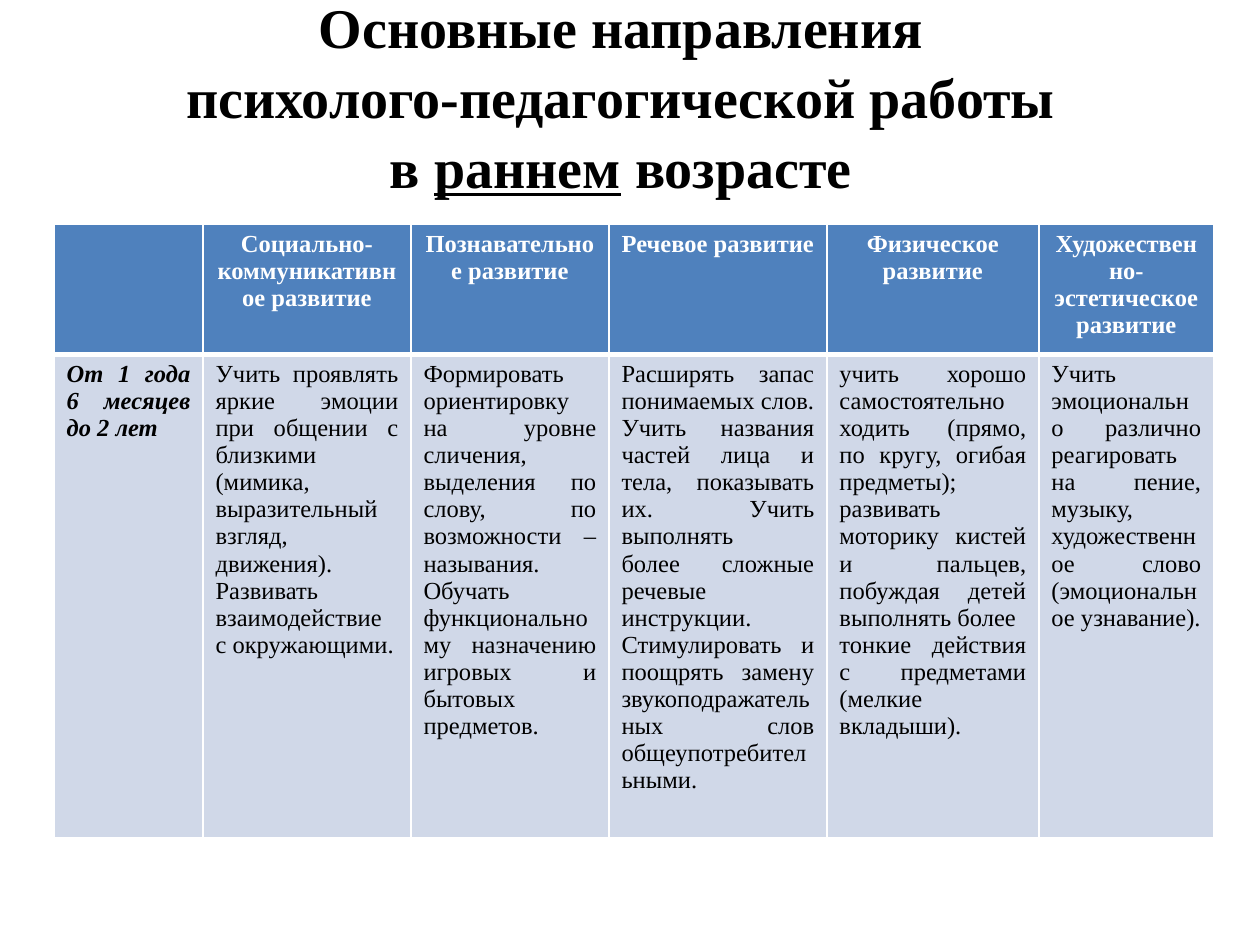
import pptx
import pptx.dml.color
import pptx.enum.text
import pptx.oxml.ns
import pptx.util
from lxml import etree

EMU_PER_PX = 914400 // 126
FONT = "Times New Roman"
ALIGN = pptx.enum.text.PP_ALIGN
HEADERS = [
    "",
    "Социально-коммуникативное развитие",
    "Познавательное развитие",
    "Речевое развитие",
    "Физическое развитие",
    "Художественно-эстетическое развитие",
]
GOALS = [
    "От 1 года 6 месяцев до 2 лет",
    "Учить проявлять яркие эмоции при общении с близкими\n"
    "(мимика, выразительный взгляд, движения). Развивать взаимодействие с окружающими.",
    "Формировать ориентировку на уровне сличения, выделения по слову, по возможности – называния. "
    "Обучать функциональному назначению игровых и бытовых предметов.",
    "Расширять запас понимаемых слов. Учить названия частей лица и тела, показывать их. Учить выполнять\n"
    "более сложные речевые инструкции. Стимулировать и поощрять замену звукоподражательных слов "
    "общеупотребительными.",
    "учить хорошо самостоятельно ходить (прямо, по кругу, огибая предметы); развивать моторику кистей "
    "и пальцев, побуждая детей выполнять более\n"
    "тонкие действия с предметами (мелкие вкладыши).",
    "Учить эмоционально различно реагировать на пение, музыку, художественное слово "
    "(эмоциональное узнавание).",
]
COLUMN_WIDTHS = [149, 208, 198, 218, 212, 175]
ROW_HEIGHT = 52


def px(length):
    return pptx.util.Emu(length * EMU_PER_PX)


def color(value):
    return pptx.dml.color.RGBColor.from_string(value)


class SlideBuilder:
    """Holds the style and the current slide and adds its elements."""

    def __init__(self, slide):
        self.slide = slide
        self.header_fill = "4F81BD"
        self.body_fill = "D0D8E8"
        self.light = "FFFFFF"
        self.dark = "000000"

    def format_runs(self, paragraph, size, text_color, bold=False, italic=False):
        for run in paragraph.runs:
            run.font.name = FONT
            run.font.size = pptx.util.Pt(size)
            run.font.bold = bold
            run.font.italic = italic
            run.font.color.rgb = color(text_color)

    def title(self, left, top, width, height, before, underlined, after):
        shape = self.slide.shapes.add_textbox(px(left), px(top), px(width), px(height))
        text_frame = shape.text_frame
        text_frame.word_wrap = True
        text_frame.vertical_anchor = pptx.enum.text.MSO_ANCHOR.MIDDLE
        paragraph = text_frame.paragraphs[0]
        paragraph.text = before
        paragraph.alignment = ALIGN.CENTER
        paragraph.line_spacing = 1.04
        for text, underline in ((underlined, True), (after, False)):
            run = paragraph.add_run()
            run.text = text
            run.font.underline = underline
        self.format_runs(paragraph, 32, self.dark, bold=True)

    def borders(self, cell, top, bottom):
        properties = cell._tc.get_or_add_tcPr()
        for side, points in (("L", 1), ("R", 1), ("T", top), ("B", bottom)):
            line = etree.SubElement(properties, pptx.oxml.ns.qn(f"a:ln{side}"), w=str(pptx.util.Pt(points)))
            fill = etree.SubElement(line, pptx.oxml.ns.qn("a:solidFill"))
            etree.SubElement(fill, pptx.oxml.ns.qn("a:srgbClr"), val=self.light)

    def cell(self, cell, text, header, label):
        self.borders(cell, top=1 if header else 3, bottom=3 if header else 1)
        cell.fill.solid()
        cell.fill.fore_color.rgb = color(self.header_fill if header else self.body_fill)
        cell.text_frame.text = text
        for paragraph in cell.text_frame.paragraphs:
            paragraph.alignment = ALIGN.CENTER if header else ALIGN.JUSTIFY
            self.format_runs(paragraph, 14, self.light if header else self.dark,
                             bold=header or label, italic=label and not header)

    def table(self, left, top, widths, row_height, rows):
        frame = self.slide.shapes.add_table(
            len(rows), len(widths), px(left), px(top), px(sum(widths)), px(row_height * len(rows)))
        table = frame.table
        for column, width in zip(table.columns, widths):
            column.width = px(width)
        for row_index, texts in enumerate(rows):
            for column_index, text in enumerate(texts):
                self.cell(table.cell(row_index, column_index), text,
                          header=row_index == 0, label=column_index == 0)


def main():
    presentation = pptx.Presentation()
    presentation.slide_width = pptx.util.Inches(10)
    presentation.slide_height = pptx.util.Inches(7.5)
    builder = SlideBuilder(presentation.slides.add_slide(presentation.slide_layouts[6]))
    builder.title(54, 16, 1134, 158,
                  "Основные направления\vпсихолого-педагогической работы\vв ", "раннем", " возрасте")
    builder.table(54, 224, COLUMN_WIDTHS, ROW_HEIGHT, [HEADERS, GOALS])
    presentation.save("out.pptx")


if __name__ == "__main__":
    main()
